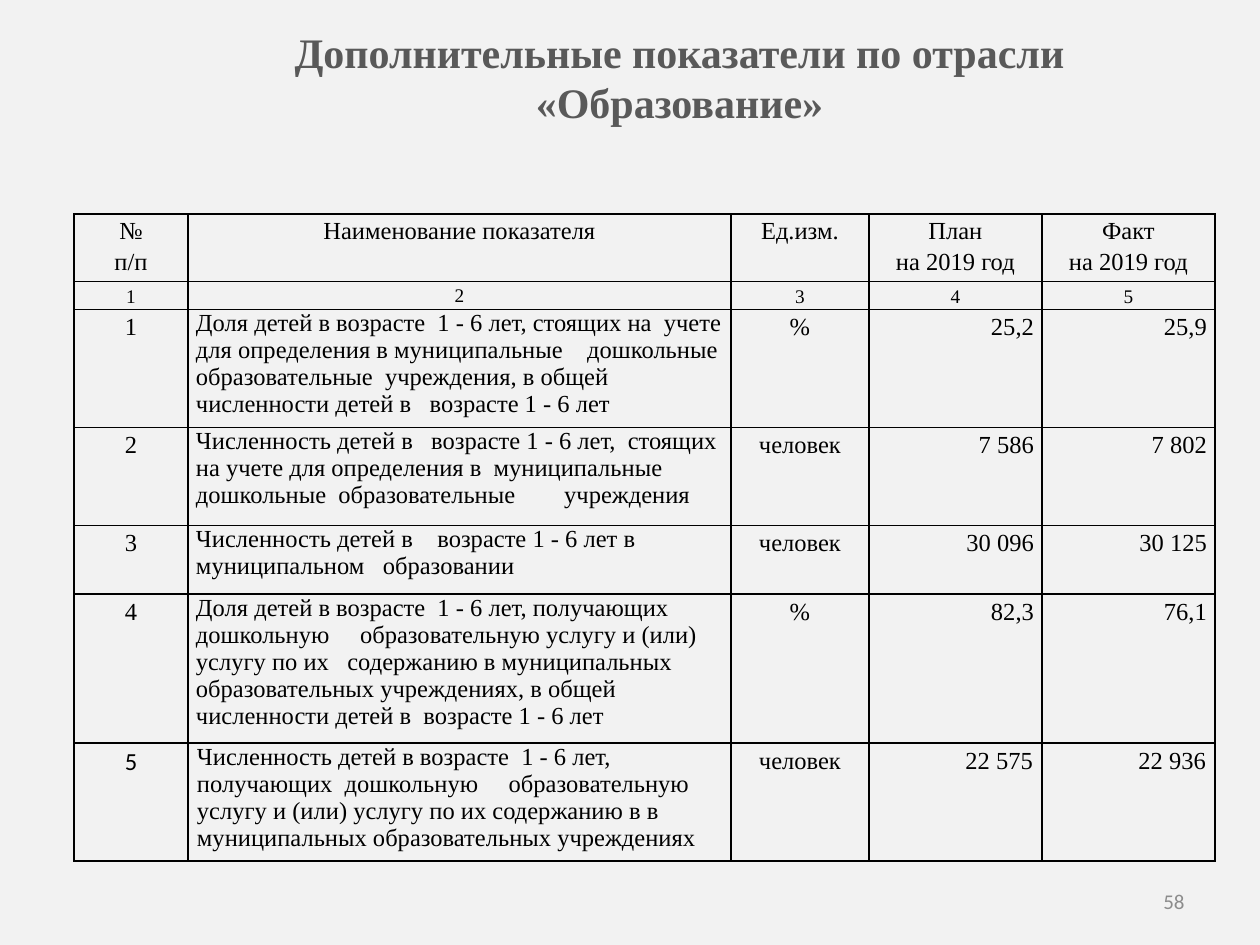
from dataclasses import dataclass

from lxml.etree import SubElement
from pptx import Presentation
from pptx.dml.color import RGBColor as Rgb
from pptx.enum.text import MSO_ANCHOR as Anchor, PP_ALIGN as Align
from pptx.oxml.ns import qn
from pptx.util import Emu, Pt

PX_PER_INCH = 126


@dataclass(frozen=True)
class Theme:
    background: Rgb = Rgb.from_string("F2F2F2")
    title: Rgb = Rgb.from_string("595959")
    page_number: Rgb = Rgb.from_string("8C8C8C")
    text: Rgb = Rgb.from_string("000000")
    border: str = "000000"
    border_width: int = Pt(1)
    serif: str = "Times New Roman"
    sans: str = "Calibri"
    title_size: int = Pt(24)
    body_size: int = Pt(14)
    number_size: int = Pt(12)
    index_size: int = Pt(11)
    line_spacing: float = 1.15


THEME = Theme()

COLUMN_WIDTHS = [114, 543, 138, 173, 173]
ROW_HEIGHTS = [62, 28, 117, 98, 69, 149, 108]

HEADINGS = ["№\nп/п", "Наименование показателя", "Ед.изм.",
            "План\nна 2019 год", "Факт\nна 2019 год"]
INDICATORS = [
    ["Доля детей в возрасте  1 - 6 лет, стоящих на  учете для определения в "
     "муниципальные    дошкольные образовательные  учреждения, в общей "
     "численности детей в   возрасте 1 - 6 лет", "%", "25,2", "25,9"],
    ["Численность детей в   возрасте 1 - 6 лет,  стоящих на учете для "
     "определения в  муниципальные  дошкольные  образовательные        "
     "учреждения", "человек", "7 586", "7 802"],
    ["Численность детей в    возрасте 1 - 6 лет в   муниципальном   "
     "образовании", "человек", "30 096", "30 125"],
    ["Доля детей в возрасте  1 - 6 лет, получающих  дошкольную     "
     "образовательную услугу и (или) услугу по их   содержанию в "
     "муниципальных образовательных учреждениях, в общей   численности "
     "детей в  возрасте 1 - 6 лет", "%", "82,3", "76,1"],
    ["Численность детей в возрасте  1 - 6 лет, получающих  дошкольную     "
     "образовательную услугу и (или) услугу по их содержанию в в "
     "муниципальных образовательных учреждениях",
     "человек", "22 575", "22 936"],
]


def px(count):
    return Emu(round(count * 914400 / PX_PER_INCH))


def set_all(target, values):
    for name, value in values.items():
        setattr(target, name, value)


def write_text(frame, text, align, color, spacing=None, **font):
    """Write one paragraph for each line of the text."""
    for index, line in enumerate(text.split("\n")):
        para = frame.paragraphs[0] if index == 0 else frame.add_paragraph()
        set_all(para, {"alignment": align, "line_spacing": spacing})
        span = para.add_run()
        span.text = line
        set_all(span.font, font)
        span.font.color.rgb = color


def add_text(page, bounds, text, align, color, **font):
    box = page.shapes.add_textbox(*map(px, bounds))
    set_all(box.text_frame, {"word_wrap": True,
                             "vertical_anchor": Anchor.MIDDLE})
    write_text(box.text_frame, text, align, color, **font)


def add_borders(cell):
    properties = cell._tc.get_or_add_tcPr()
    for index, side in enumerate(("lnL", "lnR", "lnT", "lnB")):
        line = SubElement(properties, qn(f"a:{side}"),
                          w=str(THEME.border_width))
        fill = SubElement(line, qn("a:solidFill"))
        SubElement(fill, qn("a:srgbClr"), val=THEME.border)
        properties.insert(index, line)


def fill_cell(cell, text, align, spacing=THEME.line_spacing, margin=8,
              anchor=Anchor.TOP, size=THEME.body_size, name=THEME.serif):
    set_all(cell, {"margin_left": px(margin), "margin_right": px(margin),
                   "margin_top": 0, "margin_bottom": 0,
                   "vertical_anchor": anchor})
    cell.fill.background()
    add_borders(cell)
    write_text(cell.text_frame, text, align, THEME.text, spacing,
               size=size, name=name)


def add_indicator_table(page, left, top):
    frame = page.shapes.add_table(
        len(ROW_HEIGHTS), len(COLUMN_WIDTHS), px(left), px(top),
        px(sum(COLUMN_WIDTHS)), px(sum(ROW_HEIGHTS)))
    table = frame.table
    set_all(table, {"first_row": False, "horz_banding": False})
    for column, width in zip(table.columns, COLUMN_WIDTHS):
        column.width = px(width)
    for row, height in zip(table.rows, ROW_HEIGHTS):
        row.height = px(height)

    # Headings and the column numbers under them
    for index, heading in enumerate(HEADINGS):
        fill_cell(table.cell(0, index), heading, Align.CENTER)
        fill_cell(table.cell(1, index), str(index + 1), Align.CENTER,
                  spacing=None if index == 1 else THEME.line_spacing,
                  anchor=Anchor.MIDDLE, size=THEME.index_size)

    # Indicators; the last row has wider margins and a sans number
    aligns = [Align.CENTER, None, Align.CENTER, Align.RIGHT, Align.RIGHT]
    for number, values in enumerate(INDICATORS, 1):
        last = number == len(INDICATORS)
        for index, text in enumerate([str(number), *values]):
            fill_cell(table.cell(number + 1, index), text, aligns[index],
                      spacing=None if index == 1 else THEME.line_spacing,
                      margin=9 if last else 8,
                      name=THEME.sans if last and index == 0 else THEME.serif)


def main():
    deck = Presentation()
    set_all(deck, {"slide_width": px(1260), "slide_height": px(945)})
    page = deck.slides.add_slide(deck.slide_layouts[6])
    page.background.fill.solid()
    page.background.fill.fore_color.rgb = THEME.background

    # Page number
    add_text(page, (903, 876, 294, 50), "58", Align.RIGHT, THEME.page_number,
             size=THEME.number_size, name=THEME.sans)

    # Indicators
    add_indicator_table(page, 74, 214)

    # Title
    add_text(page, (144, 37, 1071, 79),
             "Дополнительные показатели по отрасли «Образование»",
             Align.CENTER, THEME.title,
             size=THEME.title_size, name=THEME.serif, bold=True)

    deck.save("out.pptx")


if __name__ == "__main__":
    main()
